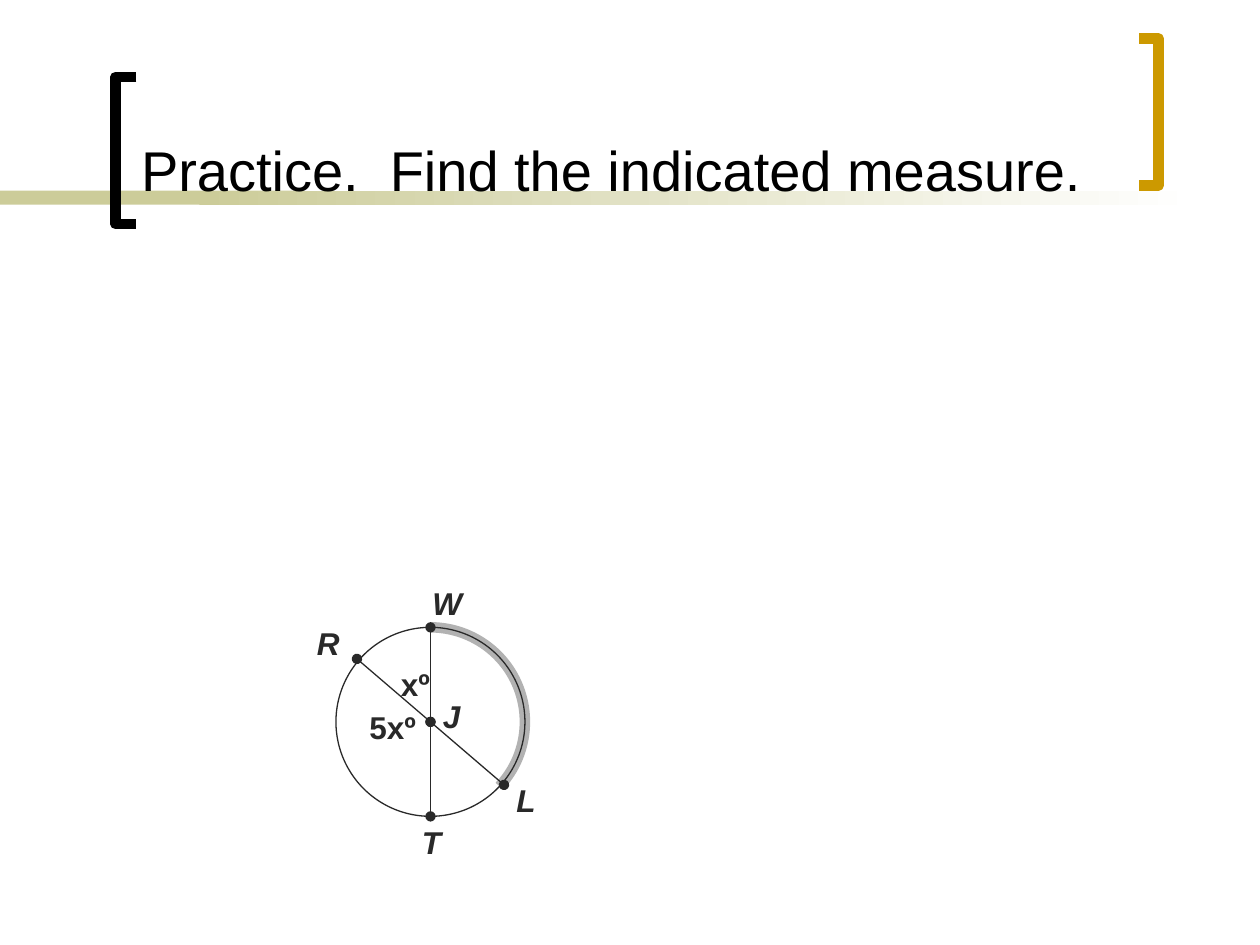
from lxml.etree import SubElement
from pptx import Presentation
from pptx.dml.color import RGBColor
from pptx.enum.shapes import MSO_CONNECTOR, MSO_SHAPE
from pptx.enum.text import MSO_ANCHOR
from pptx.oxml.ns import qn
from pptx.util import Pt


def rgb(color):
    return RGBColor.from_string(color)


def add_text(box, text, size, color, bold=False, italic=False):
    """Add a text box, given as left, top, width, height, with a single run."""
    tf = s.shapes.add_textbox(*map(Pt, box)).text_frame
    tf.word_wrap = True
    r = tf.paragraphs[0].add_run()
    r.text = text
    r.font.name = "Arial"
    r.font.size = Pt(size)
    r.font.bold = bold
    r.font.italic = italic
    r.font.color.rgb = rgb(color)
    return tf


prs = Presentation()
prs.slide_width, prs.slide_height = Pt(720), Pt(540)
s = prs.slides.add_slide(prs.slide_layouts[6])
INK = "292929"

# Title band: a solid part, then a fade to white
for left, width, fades in [(0, 168, False), (114, 570, True)]:
    sp = s.shapes.add_shape(MSO_SHAPE.RECTANGLE, Pt(left), Pt(109), Pt(width), Pt(8))
    sp.shadow.inherit = False
    sp.line.fill.background()
    if fades:
        sp.fill.gradient()
        sp.fill.gradient_angle = 0
        for stop, color in zip(sp.fill.gradient_stops, ("CCCC99", "FFFFFF")):
            stop.color.rgb = rgb(color)
    else:
        sp.fill.solid()
        sp.fill.fore_color.rgb = rgb("CCCC99")

# Brackets: tips at one x, spine at the other
for tip, spine, top, color in [(78, 66, 44, "000000"), (651, 662.5, 21.5, "CC9900")]:
    bottom = top + 84
    path = s.shapes.build_freeform(tip, top, scale=Pt(1))
    path.add_line_segments([(spine, top), (spine, bottom), (tip, bottom)], close=False)
    sp = path.convert_to_shape()
    sp.shadow.inherit = False
    sp.fill.background()
    sp.line.color.rgb = rgb(color)
    sp.line.width = Pt(6)

tf = add_text((73.5, 8, 564, 111.5), "Practice.  Find the indicated measure.", 32, "000000")
tf.vertical_anchor = MSO_ANCHOR.BOTTOM

# Circle J with arc WL highlighted
cx, cy, radius = 246, 412.5, 54
for kind, color, weight in [(MSO_SHAPE.ARC, "B2B2B2", 6), (MSO_SHAPE.OVAL, INK, 0.75)]:
    sp = s.shapes.add_shape(kind, Pt(cx - radius), Pt(cy - radius), Pt(2 * radius), Pt(2 * radius))
    sp.shadow.inherit = False
    sp.fill.background()
    sp.line.color.rgb = rgb(color)
    sp.line.width = Pt(weight)
    if kind == MSO_SHAPE.ARC:
        # Angles clockwise from 3 o'clock, 0.6 units to the degree
        sp.adjustments[0] = 270 * 0.6
        sp.adjustments[1] = 43 * 0.6

J = (cx, cy)
W, T = (cx, cy - radius), (cx, cy + radius)
R, L = (cx - 42, cy - 36), (cx + 42, cy + 36)
for start, end in [(J, W), (T, J), (R, L)]:
    cn = s.shapes.add_connector(MSO_CONNECTOR.STRAIGHT, *map(Pt, start + end))
    cn.line.color.rgb = rgb(INK)
    cn.line.width = Pt(0.75)
    ln = cn.line._get_or_add_ln()
    for tag in ("a:headEnd", "a:tailEnd"):
        SubElement(ln, qn(tag), type="oval")
    SubElement(cn._element.spPr, qn("a:effectLst"))

for text, left, top, width in [
    ("W", 240, 330, 42), ("L", 288, 443, 42), ("T", 234, 466.5, 42), ("J", 246, 394.5, 42),
    ("xº", 222, 376.5, 54), ("5xº", 204, 401, 54), ("R", 174, 353, 42),
]:
    tf = add_text((left, top, width, 29), text, 18, INK, bold=True, italic=text.isupper())
    tf.paragraphs[0].space_before = Pt(2)

prs.save("out.pptx")
